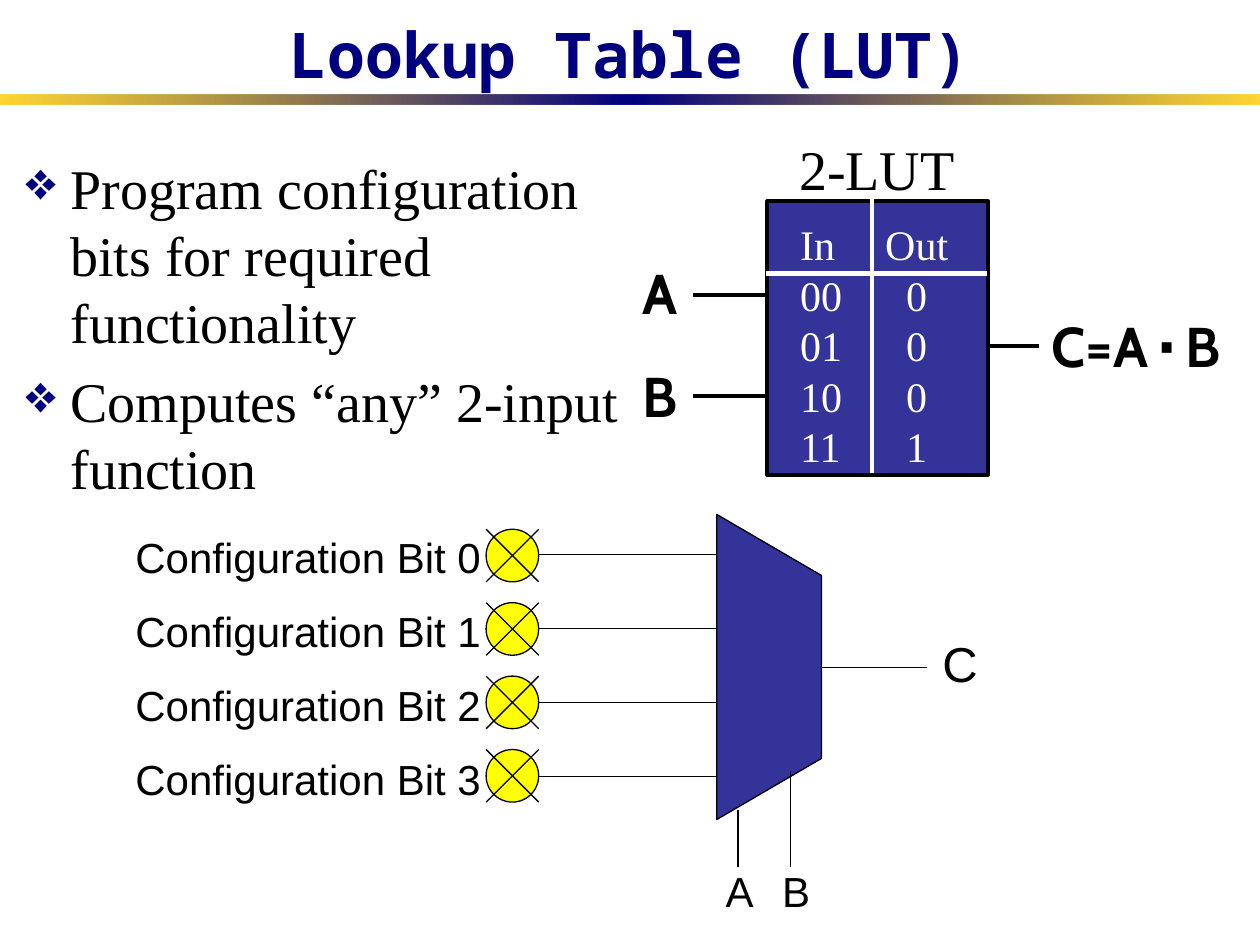
import pptx
import pptx.util
import pptx.oxml
import pptx.oxml.ns
import pptx.dml.color
import pptx.enum.shapes
import pptx.enum.text
from lxml import etree

Cm, Pt = pptx.util.Cm, pptx.util.Pt
RGB = pptx.dml.color.RGBColor
Shape = pptx.enum.shapes.MSO_SHAPE
Fit = pptx.enum.text.MSO_AUTO_SIZE
Align = pptx.enum.text.PP_ALIGN
Anchor = pptx.enum.text.MSO_ANCHOR
qn = pptx.oxml.ns.qn

BLACK = RGB(0, 0, 0)
WHITE = RGB(255, 255, 255)
NAVY = RGB(0x00, 0x00, 0x7F)
BLUE = RGB(0x33, 0x33, 0x99)
YELLOW = RGB(255, 255, 0)
GOLD = RGB(0xFF, 0xCC, 0x00)
SERIF, SANS, MONO, LABEL = "Times New Roman", "Arial", "Noto Sans Mono", "Cabin"

TITLE = "Lookup Table (LUT)"
POINTS = ["Program configuration bits for required functionality",
          "Computes “any” 2-input function"]
TABLE = [("In", "Out"), ("00", "0"), ("01", "0"), ("10", "0"), ("11", "1")]
PORTS = [("A", 5.08, 5.94), ("B", 7.16, 7.98)]        # name, label top, wire y
OUTPUT = [("C=A", 32), (" ", 20), ("⋅", 32), (" ", 20), ("B", 32)]
BITS = [f"Configuration Bit {n}" for n in range(4)]
SELECT = [("A", 14.38, 14.88, 16.33), ("B", 15.52, 15.93, 15.54)]  # name, label x, wire x, top
BULB, STEP, WIRE = 1.06, 1.48, 1.49                   # size, bulb pitch, wire pitch

deck = pptx.Presentation()
deck.slide_width, deck.slide_height = Cm(25.4), Cm(19.05)
slide = deck.slides.add_slide(deck.slide_layouts[6])


def add(parent, tag, **attrs):
    return etree.SubElement(parent, qn(tag), attrs)


def bullet(par):
    props = par._p.get_or_add_pPr()
    props.set("marL", str(Cm(0.97)))
    props.set("indent", str(-Cm(0.9)))
    add(add(props, "a:buClr"), "a:srgbClr", val=str(NAVY))
    add(props, "a:buSzPct", val="95000")
    add(props, "a:buChar", char="❖")


def text(paras, x, y, w, h, size=24, font=SANS, color=BLACK, bold=False,
         wrap=False, grow=True, align=None, anchor=Anchor.TOP, gap=0,
         bullets=False, tab=None):
    """Each paragraph is a string or a list of (string, size) runs."""
    box = slide.shapes.add_textbox(Cm(x), Cm(y), Cm(w), Cm(h))
    frame = box.text_frame
    frame.word_wrap = wrap
    frame.auto_size = Fit.SHAPE_TO_FIT_TEXT if grow else Fit.NONE
    frame.vertical_anchor = anchor
    for i, item in enumerate(paras):
        par = frame.add_paragraph() if i else frame.paragraphs[0]
        if align is not None:
            par.alignment = align
        if i and gap:
            par.space_before = Pt(gap)
        if bullets:
            bullet(par)
        if tab:
            stops = add(par._p.get_or_add_pPr(), "a:tabLst")
            add(stops, "a:tab", pos=str(Cm(tab)), algn="ctr")
        for words, points in [(item, size)] if isinstance(item, str) else item:
            run = par.add_run()
            run.text = words
            run.font.size, run.font.name = Pt(points), font
            run.font.bold, run.font.color.rgb = bold, color


def line(x1, y1, x2, y2, width=0.75, color=BLACK, home=slide):
    wire = home.shapes.add_connector(pptx.enum.shapes.MSO_CONNECTOR.STRAIGHT,
                                     Cm(x1), Cm(y1), Cm(x2), Cm(y2))
    wire.line.width, wire.line.color.rgb = Pt(width), color
    add(wire._element.spPr, "a:effectLst")


def shape(kind, x, y, w, h, fill, width=0.75, home=slide):
    form = home.shapes.add_shape(kind, Cm(x), Cm(y), Cm(w), Cm(h))
    form.shadow.inherit = False
    form.fill.solid()
    form.fill.fore_color.rgb = fill
    if width:
        form.line.width, form.line.color.rgb = Pt(width), BLACK
    else:
        form.line.fill.background()
    return form


def blend(form, stops):
    """Fill with a horizontal gradient of (percent, colour, opacity) stops."""
    form.fill.gradient()
    form.fill.gradient_angle = 0
    rail = form._element.spPr.find(qn("a:gradFill")).find(qn("a:gsLst"))
    for old in list(rail):
        rail.remove(old)
    for place, color, solid in stops:
        stop = add(rail, "a:gs", pos=str(place * 1000))
        tint = add(stop, "a:srgbClr", val=str(color))
        add(tint, "a:alpha", val=str(solid * 1000))


def bulb(x, y):
    group = slide.shapes.add_group_shape()
    shape(Shape.OVAL, x, y, BULB, BULB, YELLOW, home=group)
    line(x, y, x + BULB, y + BULB, home=group)
    line(x, y + BULB, x + BULB, y, home=group)


# Heading and bullets
blend(shape(Shape.RECTANGLE, 0, 1.9, 25.4, 0.2, NAVY, width=0),
      [(0, GOLD, 80), (50, NAVY, 100), (100, GOLD, 80)])
text([TITLE], 0.64, 0, 24.13, 1.96, size=36, font=MONO, color=NAVY, bold=True,
     wrap=True, grow=False, align=Align.CENTER, anchor=Anchor.BOTTOM)
text(POINTS, 0.2, 2.97, 12.9, 8.05, size=32, font=SERIF, wrap=True, grow=False,
     gap=6.4, bullets=True)

# Lookup table with its ports
shape(Shape.RECTANGLE, 15.47, 4.06, 4.45, 5.51, BLUE, width=2.25)
text(["\t".join(row) for row in TABLE], 15.88, 4.29, 3.56, 5.33, font=SERIF,
     color=WHITE, wrap=True, tab=2.35)
line(15.44, 5.51, 19.89, 5.51, width=3, color=WHITE)
line(17.58, 4.01, 17.58, 9.53, width=2.25, color=WHITE)
text(["2-LUT"], 15.86, 2.59, 4.2, 1.6, size=32, font=SERIF, wrap=True)
for name, top, y in PORTS:
    line(15.47, y, 13.97, y, width=2.25)
    text([name], 12.7, top, 1.3, 1.6, size=32, font=LABEL, bold=True)
line(19.91, 6.98, 20.95, 6.98, width=2.25)
text([OUTPUT], 20.95, 6.15, 4.45, 1.6, font=LABEL, bold=True, wrap=True)

# Multiplexer fed by the configuration bits
for i, name in enumerate(BITS):
    bulb(9.8, 10.67 + i * STEP)
    y = 11.18 + i * WIRE
    line(9.8 + BULB, y, 14.45, y)
    text([name], 2.48, y - 0.58, 7.49, 1.27)
mux = shape(Shape.FLOWCHART_MANUAL_OPERATION, 12.43, 12.39, 6.15, 2.11, BLUE)
mux.rotation = 270
for name, x, wire, top in SELECT:
    line(wire, top, wire, 17.48)
    text([name], x, 17.32, 1.07, 1.27)
line(16.56, 13.46, 18.69, 13.46)
text(["C"], 18.75, 12.65, 1.22, 1.45, size=28)

deck.save("out.pptx")
